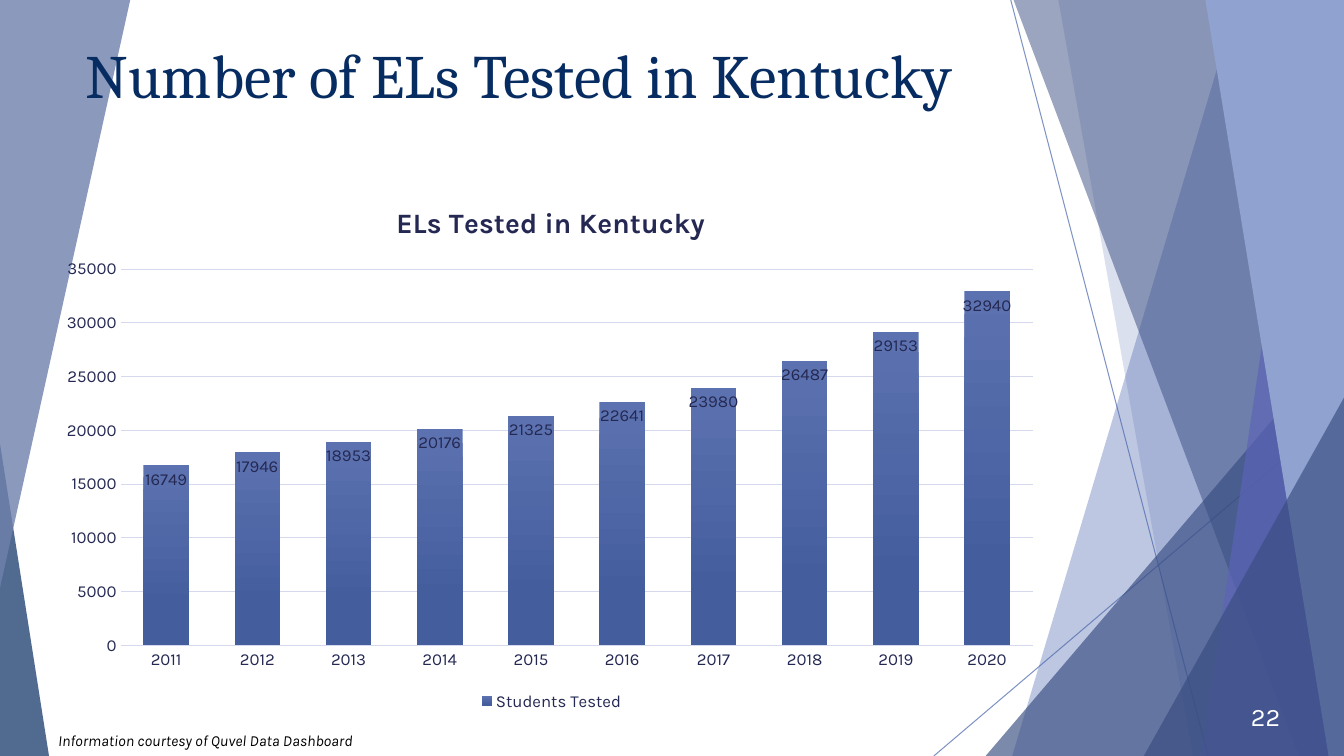
import dataclasses

import pptx
import pptx.chart.data
import pptx.dml.color
import pptx.enum.chart
import pptx.enum.shapes
import pptx.enum.text
import pptx.oxml
import pptx.oxml.ns
import pptx.util
from lxml import etree

Pt = pptx.util.Pt
qn = pptx.oxml.ns.qn


@dataclasses.dataclass(frozen=True)
class Theme:
    heading_font: str = "Cambria"
    body_font: str = "Karla"
    navy: str = "072C62"
    ink: str = "242852"
    blue: str = "4A66AC"
    deep_blue: str = "384C81"
    violet: str = "5C64B7"
    pale_blue: str = "90A2CF"
    slate: str = "6F81AC"
    grid: str = "D6D8ED"
    bar_top: str = "5C72B0"
    bar_bottom: str = "445D9D"
    white: str = "FFFFFF"
    black: str = "000000"
    title_size: int = 44
    chart_title_size: int = 20
    number_size: int = 18
    label_size: int = 12
    source_size: int = 11


@dataclasses.dataclass(frozen=True)
class Box:
    left: float
    top: float
    width: float
    height: float

    def lengths(self):
        return [Pt(v) for v in (self.left, self.top, self.width, self.height)]


THEME = Theme()
STUDENTS_TESTED = {
    2011: 16749, 2012: 17946, 2013: 18953, 2014: 20176, 2015: 21325,
    2016: 22641, 2017: 23980, 2018: 26487, 2019: 29153, 2020: 32940,
}


def rgb(code):
    return pptx.dml.color.RGBColor.from_string(code)


def style_font(font, size, color, name=THEME.body_font, bold=False, italic=False):
    font.name, font.size, font.bold, font.italic = name, Pt(size), bold, italic
    font.color.rgb = rgb(color)


def set_opacity(shape, percent):
    color = shape._element.spPr.find(".//" + qn("a:srgbClr"))
    etree.SubElement(color, qn("a:alpha"), val=str(percent * 1000))


def paint(shape, color, opacity):
    shape.shadow.inherit = False
    shape.fill.solid()
    shape.fill.fore_color.rgb = rgb(color)
    set_opacity(shape, opacity)
    shape.line.fill.background()


def add_triangle(page, box, color, opacity, apex, rotation=0):
    triangle = page.shapes.add_shape(
        pptx.enum.shapes.MSO_SHAPE.ISOSCELES_TRIANGLE, *box.lengths())
    triangle.adjustments[0] = apex
    triangle.rotation = rotation
    paint(triangle, color, opacity)


def add_right_facets(page, box):
    right, bottom = box.left + box.width, box.top + box.height

    # Thin crossing lines
    for x1, y1, x2, y2 in ((55, 0, 196, box.height), (box.width, 291, 0, box.height)):
        line = page.shapes.add_connector(
            pptx.enum.shapes.MSO_CONNECTOR.STRAIGHT,
            Pt(box.left + x1), Pt(box.top + y1), Pt(box.left + x2), Pt(box.top + y2))
        line.line.color.rgb = rgb(THEME.blue)
        line.line.width = Pt(0.75)
        set_opacity(line, 70)
        etree.SubElement(line._element.spPr, qn("a:effectLst"))

    # Bands give their upper and lower left corners, corners their left and top
    facets = (
        ("band", 217, 56, THEME.blue, 36),
        ("band", 89, 185, THEME.blue, 20),
        ("corner", 37, 240, THEME.deep_blue, 66),
        ("band", 57, 261, THEME.deep_blue, 50),
        ("band", 271, 191, THEME.violet, 70),
        ("band", 194, 282, THEME.pale_blue, 100),
        ("corner", 150, 284, THEME.deep_blue, 66),
    )
    for kind, first, second, color, opacity in facets:
        if kind == "corner":
            corner = Box(box.left + first, box.top + second,
                         box.width - first, box.height - second)
            add_triangle(page, corner, color, opacity, apex=1)
        else:
            outline = page.shapes.build_freeform(
                Pt(box.left + first), Pt(box.top), scale=1.0)
            outline.add_line_segments(
                [(Pt(right), Pt(box.top)), (Pt(right), Pt(bottom)),
                 (Pt(box.left + second), Pt(bottom))], close=True)
            paint(outline.convert_to_shape(), color, opacity)


def add_left_facets(page, box):
    lower = Box(box.left, box.top + 317, 35, box.height - 317)
    add_triangle(page, lower, THEME.navy, 70, apex=0)
    upper = Box(box.left, box.top, box.width, 420)
    add_triangle(page, upper, THEME.slate, 80, apex=1, rotation=180)


def add_title(page, box, text):
    title = page.shapes.title
    title.left, title.top, title.width, title.height = box.lengths()
    frame = title.text_frame
    frame.text = text
    frame.vertical_anchor = pptx.enum.text.MSO_ANCHOR.TOP
    para = frame.paragraphs[0]
    para.alignment = pptx.enum.text.PP_ALIGN.LEFT
    style_font(para.font, THEME.title_size, THEME.navy, THEME.heading_font)
    # Bring the title in front of the facets
    title._element.getparent().append(title._element)


def add_text(page, box, text, size, color, align, anchor, italic=False):
    frame = page.shapes.add_textbox(*box.lengths()).text_frame
    frame.word_wrap = True
    frame.vertical_anchor = anchor
    para = frame.paragraphs[0]
    para.text = text
    para.alignment = align
    style_font(para.font, size, color, italic=italic)


def place(part, target=None, **fractions):
    layout = part.get_or_add_layout() if hasattr(part, "get_or_add_layout") else part.find(qn("c:layout"))
    if layout is None:
        layout = etree.Element(qn("c:layout"))
        part.insert(0, layout)
    manual = etree.SubElement(layout, qn("c:manualLayout"))
    if target:
        etree.SubElement(manual, qn("c:layoutTarget"), val=target)
    for key in ("x", "y"):
        etree.SubElement(manual, qn(f"c:{key}Mode"), val="edge")
    for key, value in fractions.items():
        etree.SubElement(manual, qn(f"c:{key}"), val=str(value))


def add_tested_chart(page, box):
    data = pptx.chart.data.CategoryChartData()
    data.categories = [str(year) for year in STUDENTS_TESTED]
    data.add_series("Students Tested", list(STUDENTS_TESTED.values()))
    chart = page.shapes.add_chart(
        pptx.enum.chart.XL_CHART_TYPE.COLUMN_CLUSTERED, *box.lengths(), data).chart
    style_font(chart.font, THEME.label_size, THEME.ink)

    # Heading and legend
    heading = chart.chart_title
    heading.text_frame.text = "ELs Tested in Kentucky"
    style_font(heading.text_frame.paragraphs[0].font,
               THEME.chart_title_size, THEME.ink, bold=True)
    place(heading._element, x=0.34, y=0.04)
    chart.has_legend = True
    chart.legend.position = pptx.enum.chart.XL_LEGEND_POSITION.BOTTOM
    chart.legend.include_in_layout = False

    # Axes
    years, counts = chart.category_axis, chart.value_axis
    for axis in (years, counts):
        axis.major_tick_mark = pptx.enum.chart.XL_TICK_MARK.NONE
    counts.minimum_scale, counts.maximum_scale, counts.major_unit = 0, 35000, 5000
    counts.format.line.fill.background()
    for line in (years.format.line, counts.major_gridlines.format.line):
        line.color.rgb = rgb(THEME.grid)
        line.width = Pt(0.75)

    # Columns
    plot = chart.plots[0]
    plot.vary_by_categories = False
    plot.gap_width, plot.overlap = 100, -24
    fill = plot.series[0].format.fill
    fill.gradient()
    fill.gradient_angle = 270
    for stop, color, position in zip(
            fill.gradient_stops, (THEME.bar_top, THEME.bar_bottom), (0, 0.78)):
        stop.color.rgb = rgb(color)
        stop.position = position
    plot.has_data_labels = True
    plot.data_labels.show_value = True
    plot.data_labels.position = pptx.enum.chart.XL_LABEL_POSITION.INSIDE_END
    style_font(plot.data_labels.font, THEME.label_size, THEME.ink)
    place(plot._element.getparent(), "inner", x=0.07, y=0.17, w=0.91, h=0.7)


def build_tested_page(deck, box):
    page = deck.slides.add_slide(deck.slide_layouts[5])
    align, anchor = pptx.enum.text.PP_ALIGN, pptx.enum.text.MSO_ANCHOR
    add_right_facets(page, Box(box.width - 293, box.top, 293, box.height))
    add_left_facets(page, Box(box.left, box.top, 93, box.height))
    add_title(page, Box(54, 23, 708, 104), "Number of ELs Tested in Kentucky")
    add_tested_chart(page, Box(36, 127, 716, 384))
    add_text(page, Box(34.5, 519, 358, 21), "Information courtesy of Quvel Data Dashboard",
             THEME.source_size, THEME.black, align.LEFT, anchor.TOP, italic=True)
    add_text(page, Box(867.5, 497, 54, 29), "22",
             THEME.number_size, THEME.white, align.RIGHT, anchor.MIDDLE)


def main():
    deck = pptx.Presentation()
    deck.slide_width, deck.slide_height = Pt(960), Pt(540)
    build_tested_page(deck, Box(0, 0, 960, 540))
    deck.save("out.pptx")


if __name__ == "__main__":
    main()
